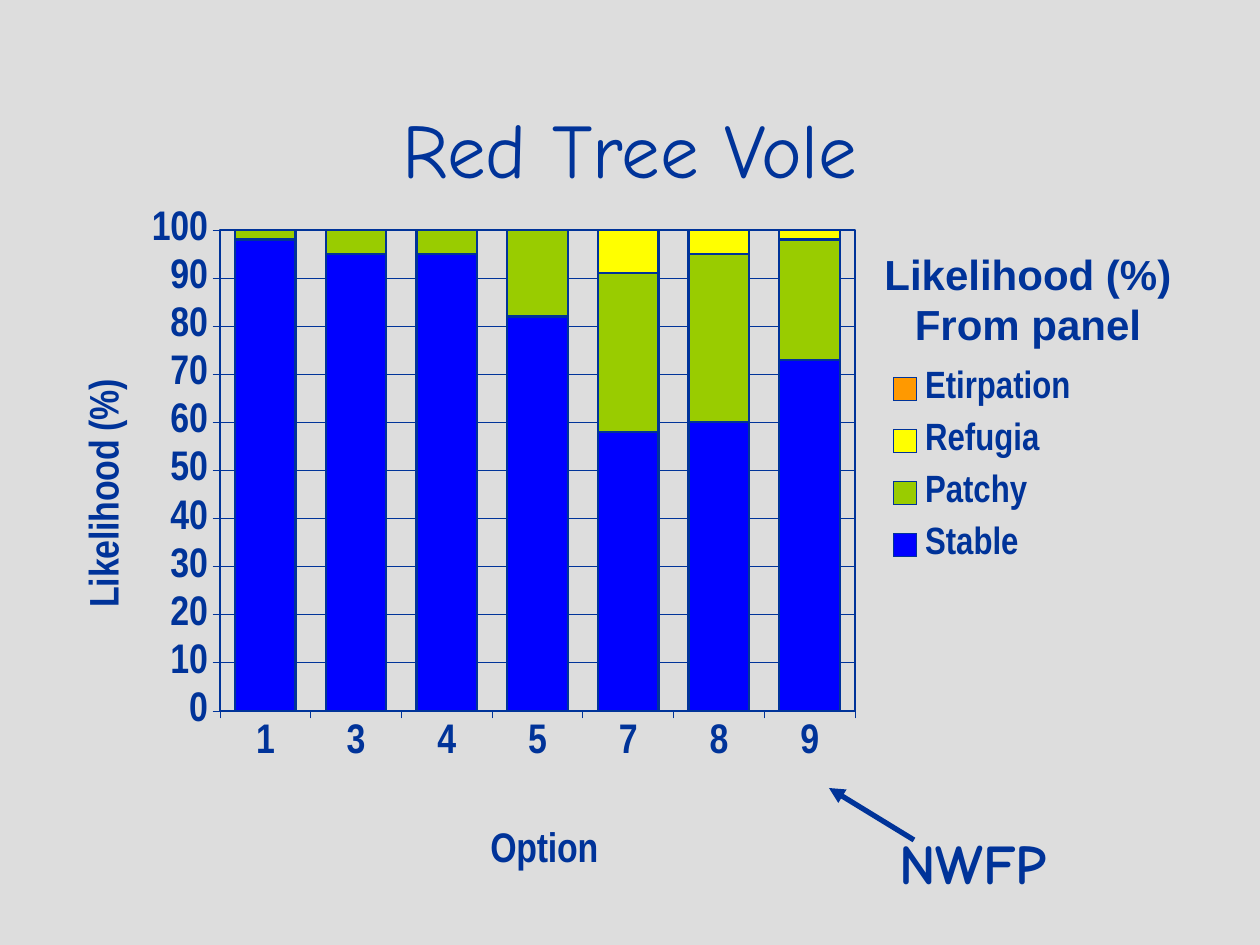
from lxml import etree
from pptx import Presentation
from pptx.chart.data import CategoryChartData
from pptx.dml.color import RGBColor
from pptx.enum.chart import XL_CHART_TYPE, XL_LEGEND_POSITION, XL_TICK_MARK
from pptx.enum.shapes import MSO_CONNECTOR
from pptx.enum.text import MSO_ANCHOR, PP_ALIGN
from pptx.oxml import parse_xml
from pptx.oxml.ns import nsdecls, qn
from pptx.util import Pt

STACKED = XL_CHART_TYPE.COLUMN_STACKED
RIGHT = XL_LEGEND_POSITION.RIGHT
OUTSIDE = XL_TICK_MARK.OUTSIDE
STRAIGHT = MSO_CONNECTOR.STRAIGHT
MIDDLE, TOP = MSO_ANCHOR.MIDDLE, MSO_ANCHOR.TOP
CENTER = PP_ALIGN.CENTER

NAVY = RGBColor(0x00, 0x33, 0x99)
GREY = RGBColor(0xDD, 0xDD, 0xDD)
BLUE = RGBColor(0x00, 0x00, 0xFF)
GREEN = RGBColor(0x99, 0xCC, 0x00)
YELLOW = RGBColor(0xFF, 0xFF, 0x00)
ORANGE = RGBColor(0xFF, 0x99, 0x00)

OPTIONS = ["1", "3", "4", "5", "7", "8", "9"]
OUTCOMES = [
    ("Stable", BLUE, [98, 95, 95, 82, 58, 60, 73]),
    ("Patchy", GREEN, [2, 5, 5, 18, 33, 35, 25]),
    ("Refugia", YELLOW, [1, 0, 0, 0, 9, 5, 2]),
    ("Etirpation", ORANGE, [0, 0, 0, 0, 0, 0, 0]),
]
CHART_BOX = (8, 175, 1089, 731)


def px(length):
    return round(length * 914400 / 126)


def set_font(font, name, size, bold=True):
    for key, value in {"name": name, "size": Pt(size), "bold": bold}.items():
        setattr(font, key, value)
    font.color.rgb = NAVY


def set_line(line, width):
    line.color.rgb = NAVY
    line.width = Pt(width)


def add_text(page, box, lines, name, size, bold=True, wrap=False, anchor=TOP):
    frame = page.shapes.add_textbox(*map(px, box)).text_frame
    frame.word_wrap = wrap
    frame.vertical_anchor = anchor
    for index, line in enumerate(lines):
        para = frame.add_paragraph() if index else frame.paragraphs[0]
        para.alignment = CENTER
        span = para.add_run()
        span.text = line
        set_font(span.font, name, size, bold)


def place(element, index, left, top, width=None, height=None, inner=False):
    for old in element.findall(qn("c:layout")):
        element.remove(old)
    chart_left, chart_top, chart_width, chart_height = CHART_BOX
    values = {"x": (left - chart_left) / chart_width,
              "y": (top - chart_top) / chart_height}
    if width:
        values.update(w=width / chart_width, h=height / chart_height)
    target = '<c:layoutTarget val="inner"/>' if inner else ""
    modes = '<c:xMode val="edge"/><c:yMode val="edge"/>'
    parts = "".join(f'<c:{key} val="{value:.4f}"/>' for key, value in values.items())
    element.insert(index, parse_xml(
        f'<c:layout {nsdecls("c")}><c:manualLayout>{target}{modes}{parts}'
        '</c:manualLayout></c:layout>'))


def style_axis(axis, title, left, top):
    axis.major_tick_mark = OUTSIDE
    set_font(axis.tick_labels.font, "Arial Narrow", 23.6)
    set_line(axis.format.line, 0.33)
    span = axis.axis_title.text_frame.paragraphs[0].add_run()
    span.text = title
    set_font(span.font, "Arial Narrow", 23.6)
    place(axis.axis_title._element, 1, left, top)


def add_likelihood_chart(page):
    data = CategoryChartData()
    data.categories = OPTIONS
    for name, _, values in OUTCOMES:
        data.add_series(name, values)
    chart = page.shapes.add_chart(STACKED, *map(px, CHART_BOX), data).chart
    chart.has_title = False
    set_font(chart.font, "Arial Narrow", 23.6)

    plot = chart.plots[0]
    for key, value in {"gap_width": 50, "overlap": 100, "vary_by_categories": False}.items():
        setattr(plot, key, value)
    for series, (_, color, _) in zip(plot.series, OUTCOMES):
        series.format.fill.solid()
        series.format.fill.fore_color.rgb = color
        set_line(series.format.line, 1.31)

    style_axis(chart.category_axis, "Option", 483, 820)
    scale = chart.value_axis
    style_axis(scale, "Likelihood (%)", 76, 372)
    for key, value in {"minimum_scale": 0, "maximum_scale": 100, "major_unit": 10}.items():
        setattr(scale, key, value)
    set_line(scale.major_gridlines.format.line, 0.33)

    chart.has_legend = True
    legend = chart.legend
    legend.position = RIGHT
    legend.include_in_layout = False
    set_font(legend.font, "Arial Narrow", 21.7)
    place(legend._element, 1, 885, 355, 195, 224)

    area = chart._chartSpace.chart.plotArea
    place(area, 0, 220, 230, 635, 481, inner=True)
    area.append(parse_xml(
        f'<c:spPr {nsdecls("c", "a")}><a:noFill/><a:ln w="{Pt(1.31)}"><a:solidFill>'
        f'<a:srgbClr val="{NAVY}"/></a:solidFill></a:ln></c:spPr>'))


def add_arrow(page, start, end):
    arrow = page.shapes.add_connector(STRAIGHT, *map(px, start + end))
    set_line(arrow.line, 3)
    etree.SubElement(arrow.line._get_or_add_ln(), qn("a:tailEnd"), type="triangle")
    etree.SubElement(arrow._element.spPr, qn("a:effectLst"))


def main():
    deck = Presentation()
    deck.slide_width, deck.slide_height = px(1260), px(945)
    page = deck.slides.add_slide(deck.slide_layouts[6])
    page.background.fill.solid()
    page.background.fill.fore_color.rgb = GREY

    add_text(page, (63, 53, 1134, 189), ["Red Tree Vole"], "Comic Neue", 44,
             bold=False, wrap=True, anchor=MIDDLE)
    add_likelihood_chart(page)
    add_text(page, (872, 242, 312, 113), ["Likelihood (%)", "From panel"], "Arial", 24)
    add_arrow(page, (914, 840), (829, 788))
    add_text(page, (876, 822, 194, 81), ["NWFP"], "Comic Neue", 32)
    deck.save("out.pptx")


if __name__ == "__main__":
    main()
